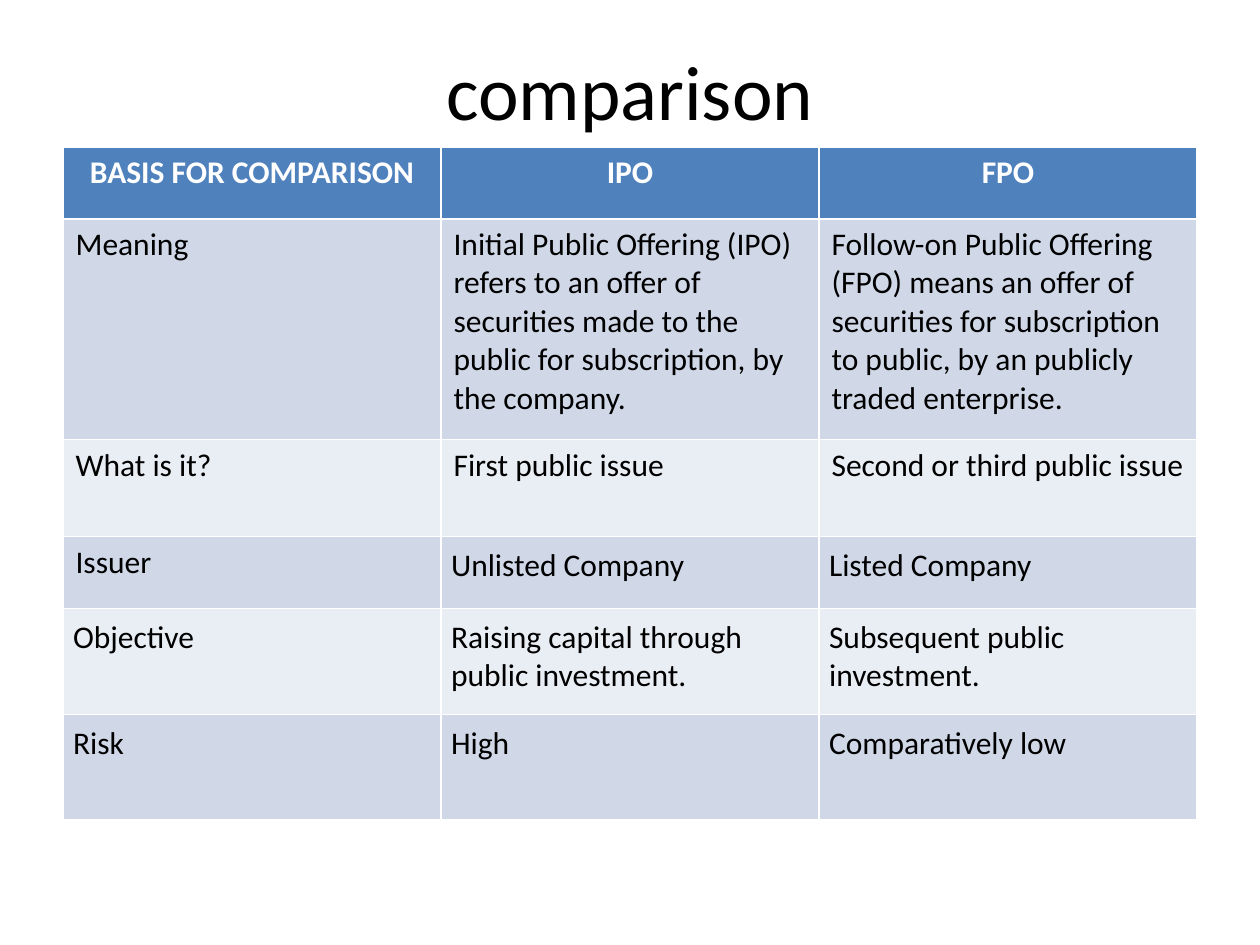
from pptx import Presentation
from pptx import util as u
from pptx.dml import color
from pptx.enum import text

HUES = {"head": "4F81BD", "odd": "D0D8E8", "even": "E9EDF4", "dark": "000000", "light": "FFFFFF"}
ROWS = [
    (0.57, ["BASIS FOR COMPARISON", "IPO", "FPO"]),
    (1.75, ["Meaning",
            "Initial Public Offering (IPO) refers to an offer of securities made to the public for subscription, by the company.",
            "Follow-on Public Offering (FPO) means an offer of securities for subscription to public, by an publicly traded enterprise."]),
    (0.77, ["What is it?", "First public issue", "Second or third public issue"]),
    (0.57, ["Issuer", "Unlisted Company", "Listed Company"]),
    (0.84, ["Objective", "Raising capital through public investment.", "Subsequent public investment."]),
    (0.84, ["Risk", "High", "Comparatively low"]),
]


def add_run(para, words, size, hue, bold=False):
    run = para.add_run()
    run.text = words
    run.font.name = "Calibri"
    run.font.size = u.Pt(size)
    run.font.bold = bold
    run.font.color.rgb = color.RGBColor.from_string(HUES[hue])


deck = Presentation()
deck.slide_width = u.Inches(10)
deck.slide_height = u.Inches(7.5)
slide = deck.slides.add_slide(deck.slide_layouts[6])

title = slide.shapes.add_textbox(u.Inches(0.5), u.Inches(0.25), u.Inches(9), u.Inches(0.92))
frame = title.text_frame
frame.word_wrap = True
frame.vertical_anchor = text.MSO_ANCHOR.MIDDLE
para = frame.paragraphs[0]
para.alignment = text.PP_ALIGN.CENTER
add_run(para, "comparison", 44, "dark")

total = sum(height for height, words in ROWS)
table = slide.shapes.add_table(len(ROWS), 3, u.Inches(0.5), u.Inches(1.17), u.Inches(9), u.Inches(total)).table
for r, (height, words) in enumerate(ROWS):
    table.rows[r].height = u.Inches(height)
    head = r == 0
    band = "head" if head else "odd" if r % 2 else "even"
    for c, word in enumerate(words):
        cell = table.cell(r, c)
        cell.fill.solid()
        cell.fill.fore_color.rgb = color.RGBColor.from_string(HUES[band])
        if r > 3 or (r == 3 and c > 0):
            cell.margin_left = cell.margin_right = u.Inches(0.08)
            cell.margin_top = cell.margin_bottom = u.Inches(0.08)
        para = cell.text_frame.paragraphs[0]
        para.alignment = text.PP_ALIGN.CENTER if head else text.PP_ALIGN.LEFT
        add_run(para, word, 18, "light" if head else "dark", head)

deck.save("out.pptx")
